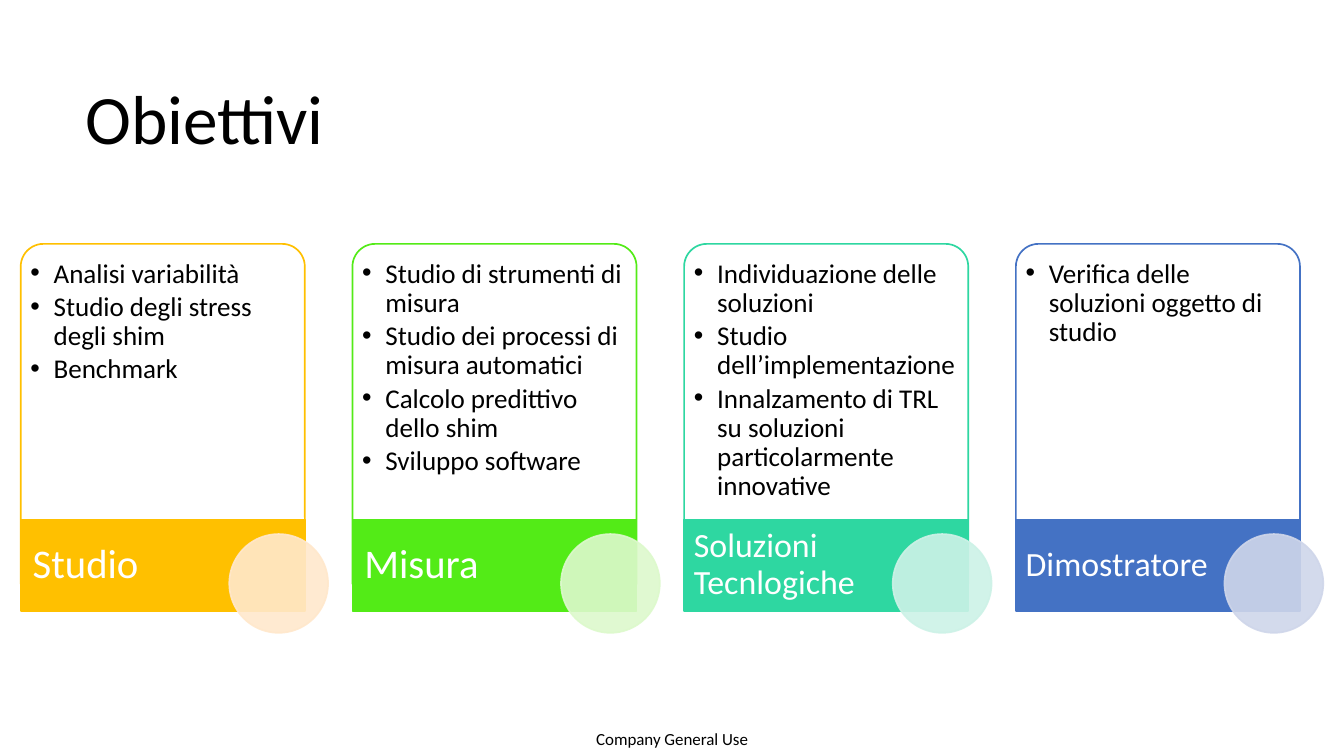
"""Build the "Obiettivi" slide: four goal cards with coloured bands and circles."""
import pptx
import pptx.util
import pptx.dml.color
import pptx.enum.shapes
import pptx.enum.text
import lxml.etree
from pptx.util import Inches, Pt
from pptx.dml.color import RGBColor
from pptx.enum.shapes import MSO_SHAPE
from pptx.enum.text import MSO_ANCHOR, PP_ALIGN
from pptx.oxml.ns import qn

BLACK = RGBColor(0x00, 0x00, 0x00)
WHITE = RGBColor(0xFF, 0xFF, 0xFF)
AMBER = RGBColor(0xFF, 0xC0, 0x00)
GREEN = RGBColor(0x53, 0xEB, 0x17)
TEAL = RGBColor(0x2E, 0xD7, 0xA1)
BLUE = RGBColor(0x44, 0x72, 0xC4)
PALE_AMBER = RGBColor(0xFF, 0xE8, 0xCC)
PALE_GREEN = RGBColor(0xDD, 0xF9, 0xCC)
PALE_TEAL = RGBColor(0xCD, 0xF2, 0xE7)
PALE_BLUE = RGBColor(0xCF, 0xD6, 0xEA)

GOALS = [
    ("Studio", 24, 0.1, AMBER, PALE_AMBER,
     ["Analisi variabilità", "Studio degli stress degli shim", "Benchmark"]),
    ("Misura", 24, 0.1, GREEN, PALE_GREEN,
     ["Studio di strumenti di misura", "Studio dei processi di misura automatici",
      "Calcolo predittivo dello shim", "Sviluppo software"]),
    ("Soluzioni Tecnlogiche", 20, 0.08, TEAL, PALE_TEAL,
     ["Individuazione delle soluzioni", "Studio dell’implementazione",
      "Innalzamento di TRL su soluzioni particolarmente innovative"]),
    ("Dimostratore", 20, 0.08, BLUE, PALE_BLUE,
     ["Verifica delle soluzioni oggetto di studio"]),
]
FIRST_LEFT = 0.17
PITCH = 2.72

deck = pptx.Presentation()
deck.slide_width = Inches(11.02)
deck.slide_height = Inches(6.2)
page = deck.slides.add_slide(deck.slide_layouts[6])


def add_panel(kind, left, top, width, height, fill, line):
    """Add a shape with a solid fill, a 1 pt outline and no shadow."""
    panel = page.shapes.add_shape(
        kind, Inches(left), Inches(top), Inches(width), Inches(height))
    panel.shadow.inherit = False
    panel.fill.solid()
    panel.fill.fore_color.rgb = fill
    panel.line.color.rgb = line
    panel.line.width = Pt(1)
    if kind != MSO_SHAPE.RECTANGLE:
        for color in panel.fill._xPr.find(qn("a:solidFill")):
            lxml.etree.SubElement(color, qn("a:alpha"), val="90000")
    return panel


def write(frame, para, text, size, color, insets, anchor):
    """Write one run and set the frame's insets (left, top, right, bottom)."""
    frame.word_wrap = True
    frame.vertical_anchor = anchor
    (frame.margin_left, frame.margin_top,
     frame.margin_right, frame.margin_bottom) = map(Inches, insets)
    span = para.add_run()
    span.text = text
    span.font.name = "Calibri"
    span.font.size = Pt(size)
    span.font.color.rgb = color


footer = page.shapes.add_textbox(
    Inches(4.72), Inches(5.91), Inches(1.58), Inches(0.29)).text_frame
footer.paragraphs[0].alignment = PP_ALIGN.CENTER
write(footer, footer.paragraphs[0], "Company General Use", 10, BLACK,
      (0, 0, 0, 0), MSO_ANCHOR.MIDDLE)

title = page.shapes.add_textbox(
    Inches(0.6), Inches(0.69), Inches(9.82), Inches(0.64)).text_frame
title.paragraphs[0].line_spacing = 0.7
write(title, title.paragraphs[0], "Obiettivi", 40.9, BLACK,
      (0.1, 0.05, 0.1, 0.05), MSO_ANCHOR.BOTTOM)

for index, (name, size, inset, strong, pale, points) in enumerate(GOALS):
    left = FIRST_LEFT + index * PITCH

    card = add_panel(MSO_SHAPE.ROUND_2_SAME_RECTANGLE, left, 2, 2.33, 2.79, WHITE, strong)
    card.adjustments[0] = 0.08

    body = page.shapes.add_textbox(
        Inches(left + 0.06), Inches(2.06), Inches(2.22), Inches(2.73)).text_frame
    for number, point in enumerate(points):
        para = body.add_paragraph() if number else body.paragraphs[0]
        props = para._p.get_or_add_pPr()
        props.set("marL", str(Inches(0.19)))
        props.set("indent", str(Inches(-0.19)))
        lxml.etree.SubElement(props, qn("a:buFont"), typeface="Arial")
        lxml.etree.SubElement(props, qn("a:buChar"), char="•")
        para.line_spacing = 0.9
        para.space_after = Pt(2.4)
        write(body, para, point, 16, BLACK, (0.02, 0.07, 0.02, 0.02), MSO_ANCHOR.TOP)

    band = add_panel(MSO_SHAPE.RECTANGLE, left, 4.26, 2.33, 0.75, strong, strong)
    label = band.text_frame.paragraphs[0]
    label.alignment = PP_ALIGN.LEFT
    label.line_spacing = 0.9
    write(band.text_frame, label, name, size, WHITE,
          (inset, 0, 0.72, 0), MSO_ANCHOR.MIDDLE)

    circle = add_panel(MSO_SHAPE.OVAL, left + 1.71, 4.38, 0.81, 0.81, pale, pale)
    outline = circle.line.fill._xPr.find(qn("a:solidFill"))
    lxml.etree.SubElement(outline[0], qn("a:alpha"), val="90000")

deck.save("out.pptx")
